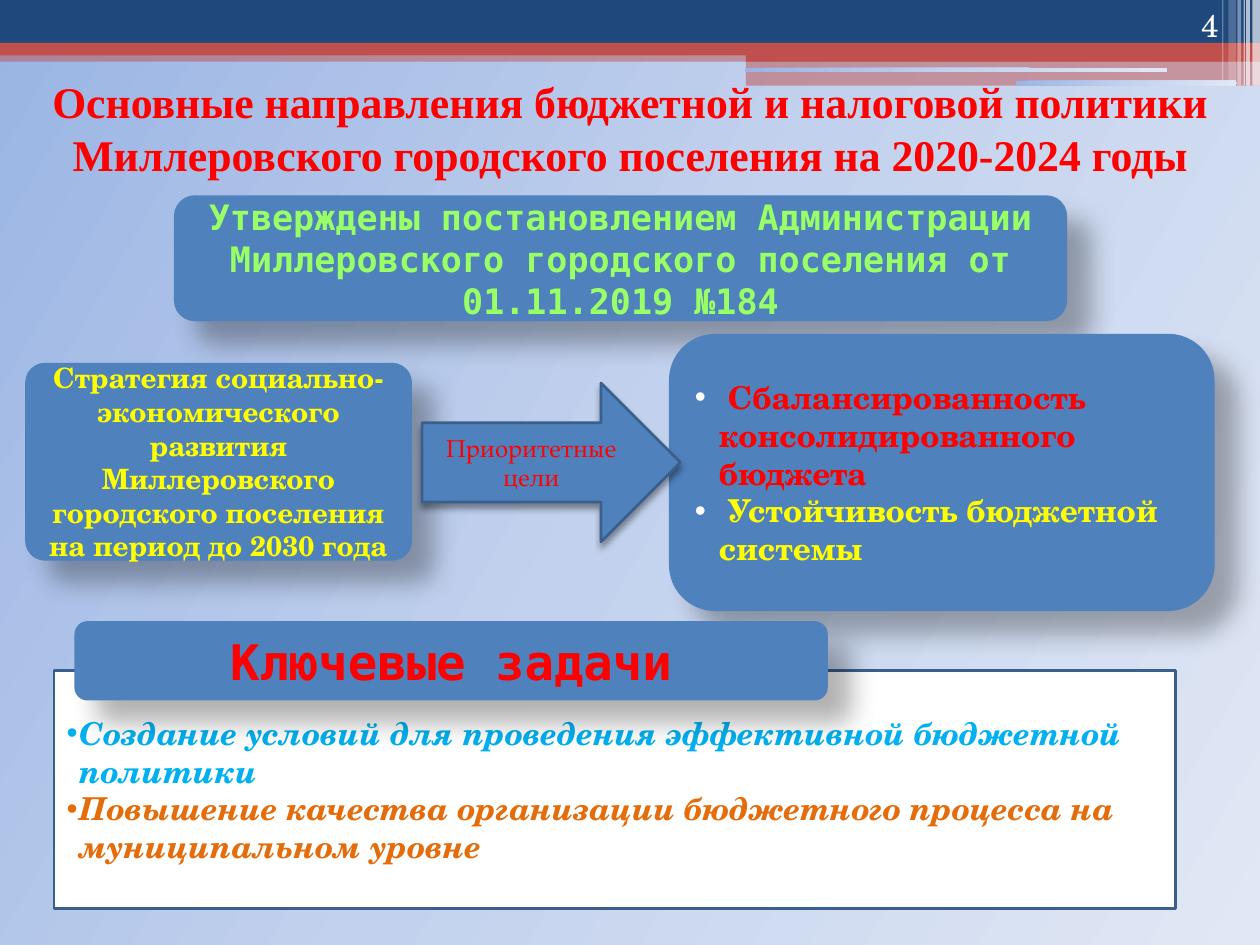
"""Build the slide on budget and tax policy directions."""
from copy import deepcopy

from lxml import etree
from pptx import Presentation
from pptx import util as u
from pptx.dml.color import RGBColor
from pptx.enum import shapes, text
from pptx.oxml.ns import qn

NAVY = RGBColor(0x1F, 0x49, 0x7D)
BRICK = RGBColor(0xC0, 0x50, 0x4D)
BLUE = RGBColor(0x4F, 0x81, 0xBD)
OUTLINE = RGBColor(0x3A, 0x5F, 0x8C)
WHITE = RGBColor(0xFF, 0xFF, 0xFF)
RED = RGBColor(0xFF, 0x00, 0x00)
YELLOW = RGBColor(0xFF, 0xFF, 0x00)
LIME = RGBColor(0x99, 0xFF, 0x66)
SKY = RGBColor(0x00, 0xB0, 0xF0)
ORANGE = RGBColor(0xE4, 0x6C, 0x0A)
HAZE = (
    (0, RGBColor(0x9A, 0xB5, 0xE4)),
    (0.5, RGBColor(0xC2, 0xD1, 0xED)),
    (1, RGBColor(0xE1, 0xE8, 0xF5)),
)
SERIF = "TeX Gyre Schola"
MONO = "DejaVu Sans Mono"
SOFT = (30, 15, 18, 45)
TIGHT = (40, 4, 3, 90)
RECT = shapes.MSO_SHAPE.RECTANGLE
ROUND = shapes.MSO_SHAPE.ROUNDED_RECTANGLE
ARROW = shapes.MSO_SHAPE.RIGHT_ARROW


def write(frame, paragraphs, *, size, font=SERIF, bold=False, italic=False,
          align=text.PP_ALIGN.CENTER, anchor=text.MSO_ANCHOR.MIDDLE, hang=None):
    """Fill a frame with paragraphs, each a list of (wording, colour) runs."""
    frame.word_wrap = True
    frame.auto_size = text.MSO_AUTO_SIZE.NONE
    frame.vertical_anchor = anchor
    for index, runs in enumerate(paragraphs):
        paragraph = frame.add_paragraph() if index else frame.paragraphs[0]
        paragraph.alignment = align
        if hang:
            props = paragraph._p.get_or_add_pPr()
            props.set("marL", str(u.Inches(hang)))
            props.set("indent", str(-u.Inches(hang)))
            etree.SubElement(props, qn("a:buFont"), typeface="Arial")
            etree.SubElement(props, qn("a:buChar"), char="•")
        for wording, colour in runs:
            run = paragraph.add_run()
            run.text = wording
            run.font.size = u.Pt(size)
            run.font.name = font
            run.font.bold = bold
            run.font.italic = italic
            run.font.color.rgb = colour


class Board:
    """Hold the style and the current slide."""

    def __init__(self):
        """Open a title-only slide with the hazy background."""
        self.deck = Presentation()
        self.deck.slide_width, self.deck.slide_height = u.Inches(10), u.Inches(7.5)
        self.slide = self.deck.slides.add_slide(self.deck.slide_layouts[5])
        self.haze(self.slide.background.fill, self.slide)

    def haze(self, fill, owner):
        """Give a fill the three-stop background gradient."""
        fill.gradient()
        stops = owner.element.find(".//" + qn("a:gsLst"))
        stops.append(deepcopy(stops[-1]))
        for stop, (position, colour) in zip(fill.gradient_stops, HAZE):
            stop.position = position
            stop.color.rgb = colour
        fill.gradient_angle = 330

    def block(self, place, fill=BLUE, kind=ROUND, opacity=100, corner=None,
              outline=None, shadow=None):
        """Add a preset shape; a fill of None means the gradient."""
        shape = self.slide.shapes.add_shape(kind, *map(u.Inches, place))
        shape.shadow.inherit = False
        if corner is not None:
            shape.adjustments[0] = corner
        if fill is None:
            self.haze(shape.fill, shape)
        else:
            shape.fill.solid()
            shape.fill.fore_color.rgb = fill
        if opacity < 100:
            tint = shape.element.spPr.find(qn("a:solidFill"))[0]
            etree.SubElement(tint, qn("a:alpha"), val=str(opacity * 1000))
        if outline is None:
            shape.line.fill.background()
        else:
            shape.line.color.rgb = outline
            shape.line.width = u.Pt(1.5)
        if shadow:
            self.cast(shape, *shadow)
        return shape

    def cast(self, shape, opacity, blur, distance, angle):
        """Add an outer black shadow to a shape."""
        effects = shape.element.spPr.find(qn("a:effectLst"))
        outer = etree.SubElement(
            effects, qn("a:outerShdw"), blurRad=str(u.Pt(blur)),
            dist=str(u.Pt(distance)), dir=str(angle * 60000),
            algn="ctr", rotWithShape="0")
        black = etree.SubElement(outer, qn("a:srgbClr"), val="000000")
        etree.SubElement(black, qn("a:alpha"), val=str(opacity * 1000))

    def heading(self, place, wording):
        """Place and format the slide title."""
        title = self.slide.shapes.title
        title.left, title.top, title.width, title.height = map(u.Inches, place)
        title.text_frame.margin_bottom = u.Inches(0.03)
        write(title.text_frame, [[(wording, RED)]], size=25, bold=True,
              font="Times New Roman", anchor=text.MSO_ANCHOR.BOTTOM)

    def page_number(self, place, wording):
        """Add the page number at the top right."""
        number = self.slide.shapes.add_textbox(*map(u.Inches, place))
        write(number.text_frame, [[(wording, WHITE)]], size=18,
              align=text.PP_ALIGN.RIGHT, anchor=text.MSO_ANCHOR.BOTTOM)

    def card(self, place, paragraphs, *, kind=ROUND, fill=BLUE, corner=None,
             outline=None, shadow=SOFT, **style):
        """Add a shape that carries text."""
        shape = self.block(place, fill, kind, corner=corner,
                           outline=outline, shadow=shadow)
        write(shape.text_frame, paragraphs, **style)


def main():
    """Draw the slide and save it."""
    board = Board()
    for place, fill, opacity in (
        ((0, 0.4, 10, 0.09), BRICK, 50),
        ((0, 0, 10, 0.34), NAVY, 100),
        ((0, 0.34, 10, 0.1), BRICK, 100),
        ((5.92, 0.39, 4.08, 0.1), BRICK, 100),
        ((5.92, 0.48, 4.08, 0.2), BRICK, 50),
    ):
        board.block(place, fill, RECT, opacity)
    for place in ((5.91, 0.54, 3.35, 0.03), (8.06, 0.64, 1.75, 0.04)):
        board.block(place, None)
    for left, width, height, opacity in (
        (9.94, 0.06, 0.68, 65), (9.89, 0.03, 0.68, 65), (9.87, 0.01, 0.68, 60),
        (9.82, 0.03, 0.68, 40), (9.75, 0.06, 0.64, 20), (9.7, 0.01, 0.64, 30),
    ):
        board.block((left, 0, width, height), WHITE, RECT, opacity)

    board.heading((0, 0.99, 10, 0.47),
                  "Основные направления бюджетной и налоговой политики "
                  "Миллеровского городского поселения на 2020-2024 годы")
    board.page_number((8.94, 0, 0.83, 0.4), "4")
    board.card((1.38, 1.55, 7.09, 1),
               [[("Утверждены постановлением Администрации Миллеровского "
                  "городского поселения от 01.11.2019 №184", LIME)]],
               size=20, font=MONO, bold=True)
    board.card((0.2, 2.88, 3.07, 1.57),
               [[("Стратегия социально-экономического развития Миллеровского "
                  "городского поселения на период до 2030 года", YELLOW)]],
               size=16, bold=True, corner=0.1)
    board.card((5.31, 2.65, 4.33, 2.2),
               [[(" ", WHITE), ("Сбалансированность консолидированного бюджета", RED)],
                [(" ", WHITE), ("Устойчивость бюджетной системы", YELLOW)]],
               size=18, bold=True, align=text.PP_ALIGN.LEFT, hang=0.19)
    board.card((3.35, 3.04, 2.05, 1.26), [[("Приоритетные цели", RED)]],
               kind=ARROW, outline=OUTLINE, shadow=TIGHT,
               size=14, font="TeX Gyre Pagella")
    board.card((0.43, 5.32, 8.9, 1.89),
               [[("Создание условий для проведения эффективной бюджетной политики", SKY)],
                [("Повышение качества организации бюджетного процесса на "
                  "муниципальном уровне", ORANGE)]],
               kind=RECT, fill=WHITE, outline=OUTLINE, shadow=None, size=18,
               bold=True, italic=True, align=text.PP_ALIGN.LEFT, hang=0.1)
    board.card((0.59, 4.93, 5.98, 0.63), [[("Ключевые задачи", RED)]],
               size=28, font=MONO, bold=True)
    board.deck.save("out.pptx")


if __name__ == "__main__":
    main()
